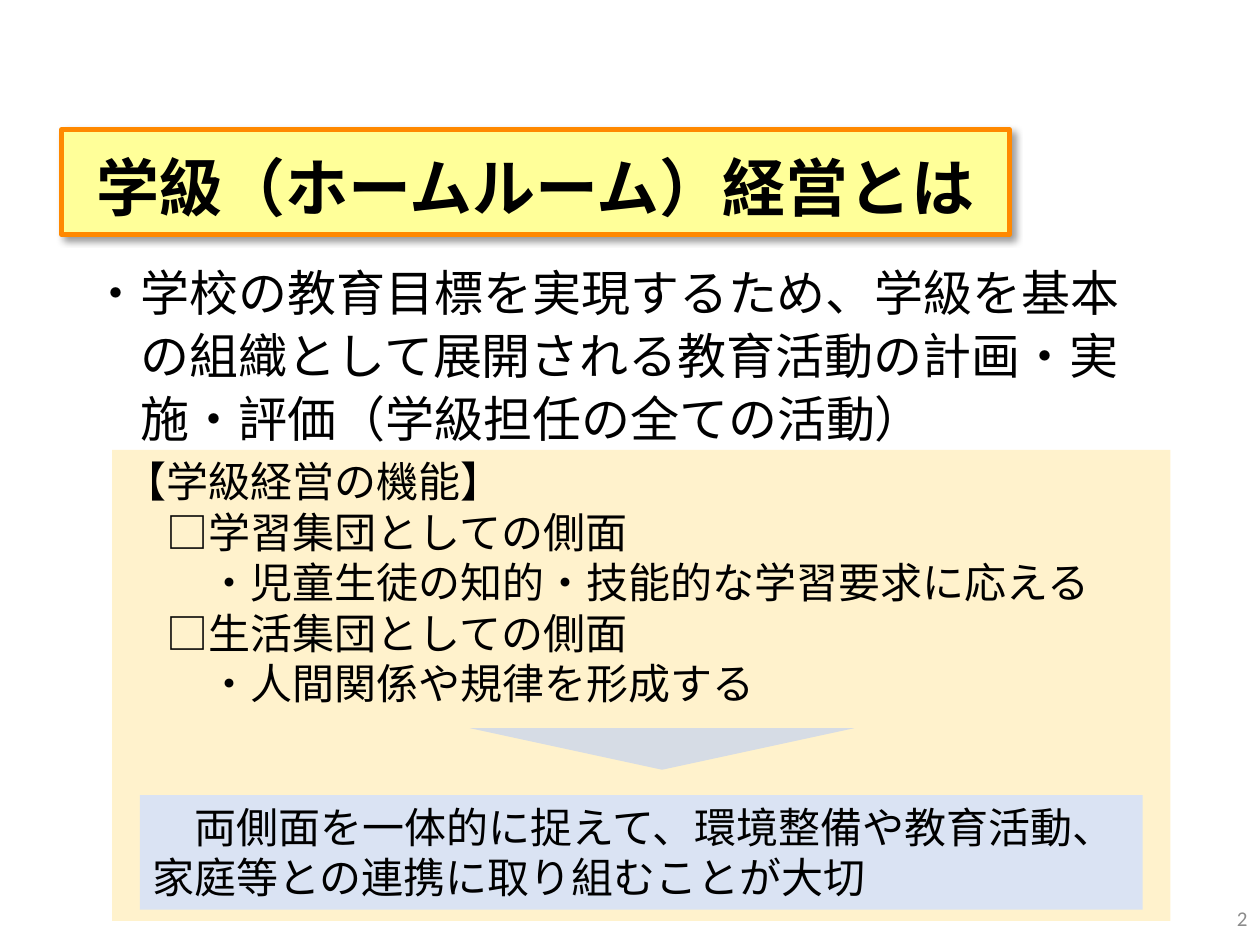
import dataclasses

import pptx
import pptx.dml.color
import pptx.enum.shapes
import pptx.enum.text
import pptx.oxml
import pptx.oxml.ns
import pptx.util

SHAPE = pptx.enum.shapes.MSO_SHAPE
ALIGN = pptx.enum.text.PP_ALIGN
ANCHOR = pptx.enum.text.MSO_ANCHOR
COLUMNS, ROWS = 100, 75


@dataclasses.dataclass(frozen=True)
class Theme:
    """Colours, fonts and type sizes of the slide."""
    japanese: str = "Noto Sans CJK JP"
    latin: str = "Calibri"
    ink: str = "000000"
    muted: str = "8C8C8C"
    heading_fill: str = "FFFF99"
    heading_line: str = "FF8900"
    panel: str = "FFF2CC"
    conclusion: str = "DAE3F3"
    arrow: str = "D6DCE5"
    heading_size: int = 36
    lead_size: int = 28
    detail_size: int = 24
    number_size: int = 12


def rgb(code):
    """Return a colour object for a hex code."""
    return pptx.dml.color.RGBColor.from_string(code)


class SlideBuilder:
    """Holds the theme and the slide and adds each kind of element."""

    def __init__(self, deck, theme):
        """Open a slide with title and body placeholders."""
        self.theme = theme
        self.slide = deck.slides.add_slide(deck.slide_layouts[1])
        self.column = deck.slide_width / COLUMNS
        self.row = deck.slide_height / ROWS

    def box(self, left, top, width, height):
        """Convert grid columns and rows to slide lengths."""
        return (round(left * self.column), round(top * self.row),
                round(width * self.column), round(height * self.row))

    def place(self, holder, cells):
        """Move a placeholder to its grid cells."""
        holder.left, holder.top, holder.width, holder.height = self.box(*cells)

    def set_lines(self, holder, lines, size, align=ALIGN.LEFT, anchor=ANCHOR.TOP,
                  spacing=None, color=None, font=None, bold=False):
        """Set (text, left margin, first-line indent) lines, in ems, and format them."""
        frame = holder.text_frame
        frame.word_wrap = True
        frame.auto_size = pptx.enum.text.MSO_AUTO_SIZE.NONE
        frame.vertical_anchor = anchor
        frame.text = "\n".join(text for text, margin, indent in lines)
        name = font or self.theme.japanese
        for paragraph, (text, margin, indent) in zip(frame.paragraphs, lines):
            paragraph.alignment = align
            paragraph.space_before = paragraph.space_after = pptx.util.Pt(0)
            paragraph.line_spacing = pptx.util.Pt(spacing) if spacing else 1.0
            properties = paragraph._p.get_or_add_pPr()
            properties.set("marL", str(pptx.util.Pt(margin * size)))
            properties.set("indent", str(pptx.util.Pt(indent * size)))
            properties.append(pptx.oxml.parse_xml(
                f"<a:buNone {pptx.oxml.ns.nsdecls('a')}/>"))
            for run in paragraph.runs:
                run.font.size = pptx.util.Pt(size)
                run.font.bold = bold
                run.font.color.rgb = rgb(color or self.theme.ink)
                run.font.name = name
                run._r.get_or_add_rPr().find(pptx.oxml.ns.qn("a:latin")).addnext(
                    pptx.oxml.parse_xml(
                        f'<a:ea {pptx.oxml.ns.nsdecls("a")} typeface="{name}"/>'))

    def heading(self, text, cells):
        """Format the title placeholder as a framed heading with a shadow."""
        title = self.slide.shapes.title
        self.place(title, cells)
        title.fill.solid()
        title.fill.fore_color.rgb = rgb(self.theme.heading_fill)
        title.line.color.rgb = rgb(self.theme.heading_line)
        title.line.width = pptx.util.Pt(3)
        title._element.spPr.append(pptx.oxml.parse_xml(
            f'<a:effectLst {pptx.oxml.ns.nsdecls("a")}>'
            f'<a:outerShdw blurRad="{pptx.util.Pt(4)}" dist="{pptx.util.Pt(3)}" '
            'dir="2700000" algn="tl" rotWithShape="0"><a:srgbClr val="000000">'
            '<a:alpha val="40000"/></a:srgbClr></a:outerShdw></a:effectLst>'))
        title.text_frame.margin_top = pptx.util.Inches(0.08)
        title.text_frame.margin_bottom = pptx.util.Inches(0.08)
        self.set_lines(title, [(text, 0, 0)], self.theme.heading_size,
                       align=ALIGN.CENTER, spacing=48, bold=True)

    def lead(self, text, cells):
        """Fill the body placeholder with a hanging paragraph."""
        body = self.slide.placeholders[1]
        self.place(body, cells)
        self.set_lines(body, [(text, 1, -1)], self.theme.lead_size, spacing=36)

    def block(self, kind, cells, fill):
        """Add a plain filled shape."""
        block = self.slide.shapes.add_shape(kind, *self.box(*cells))
        block.shadow.inherit = False
        block.fill.solid()
        block.fill.fore_color.rgb = rgb(fill)
        block.line.fill.background()
        return block

    def panel(self, lines, cells, fill):
        """Add a filled rectangle with detail text."""
        panel = self.block(SHAPE.RECTANGLE, cells, fill)
        self.set_lines(panel, lines, self.theme.detail_size)

    def down_arrow(self, cells):
        """Add a triangle that points down."""
        arrow = self.block(SHAPE.ISOSCELES_TRIANGLE, cells, self.theme.arrow)
        arrow._element.spPr.get_or_add_xfrm().set("flipV", "1")

    def page_number(self, number, cells):
        """Add the page number."""
        page = self.slide.shapes.add_textbox(*self.box(*cells))
        self.set_lines(page, [(number, 0, 0)], self.theme.number_size,
                       align=ALIGN.RIGHT, anchor=ANCHOR.MIDDLE,
                       color=self.theme.muted, font=self.theme.latin)


def main():
    """Build and save the slide on class management."""
    deck = pptx.Presentation()
    deck.slide_width = pptx.util.Inches(10)
    deck.slide_height = pptx.util.Inches(7.5)
    theme = Theme()
    builder = SlideBuilder(deck, theme)
    builder.heading("学級（ホームルーム）経営とは", (4.9, 10.3, 75.2, 8.3))
    builder.lead("・学校の教育目標を実現するため、学級を基本の組織として展開される"
                 "教育活動の計画・実施・評価（学級担任の全ての活動）",
                 (6.3, 20, 86.5, 16.2))
    builder.page_number("2", (77.5, 70.9, 22.5, 4))
    functions = [
        ("【学級経営の機能】", 0, 0),
        ("□学習集団としての側面", 1, 0),
        ("・児童生徒の知的・技能的な学習要求に応える", 2, 0),
        ("□生活集団としての側面", 1, 0),
        ("・人間関係や規律を形成する", 2, 0),
    ]
    builder.panel(functions, (8.9, 35.7, 84, 37.4), theme.panel)
    conclusion = "両側面を一体的に捉えて、環境整備や教育活動、家庭等との連携に取り組むことが大切"
    builder.panel([(conclusion, 0, 1)], (11.1, 63.1, 79.6, 9.1), theme.conclusion)
    builder.down_arrow((37.3, 57.8, 30.5, 3.3))
    deck.save("out.pptx")


if __name__ == "__main__":
    main()
